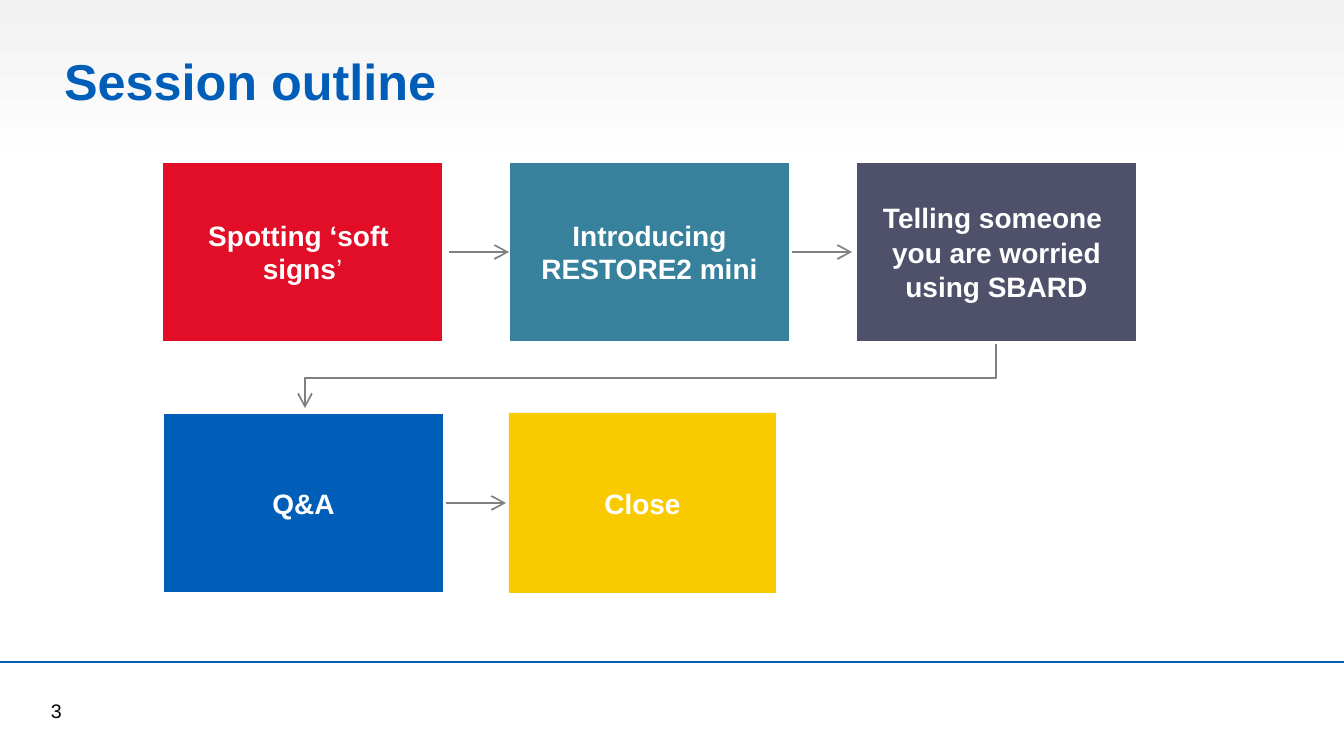
from lxml import etree
from pptx import Presentation
from pptx.dml.color import RGBColor
from pptx.enum import shapes, text
from pptx.oxml import ns
from pptx.util import Pt

PX = 12192000 / 1344
FONT = "Arial"
BLUE = RGBColor(0x00, 0x5E, 0xB8)
RED = RGBColor(0xE2, 0x0D, 0x27)
TEAL = RGBColor(0x37, 0x81, 0x9D)
SLATE = RGBColor(0x4F, 0x50, 0x69)
GOLD = RGBColor(0xFA, 0xCA, 0x01)
GREY = RGBColor(0x80, 0x80, 0x80)
PALE = RGBColor(0xF2, 0xF2, 0xF2)
WHITE = RGBColor(0xFF, 0xFF, 0xFF)
BLACK = RGBColor(0x00, 0x00, 0x00)


def px(*nums):
    return [round(n * PX) for n in nums]


def style(para, size, color, bold=False):
    font = para.font
    font.name, font.size, font.bold = FONT, Pt(size), bold
    font.color.rgb = color


def stroke(shape, color, width, head=False):
    shape.line.color.rgb = color
    shape.line.width = Pt(width)
    props = shape._element.spPr
    if head:
        etree.SubElement(props.find(ns.qn("a:ln")), ns.qn("a:tailEnd"),
                         type="arrow", w="lg", len="lg")
    if props.find(ns.qn("a:effectLst")) is None:
        etree.SubElement(props, ns.qn("a:effectLst"))


def line(slide, start, end, color, width, head=False):
    link = slide.shapes.add_connector(
        shapes.MSO_CONNECTOR.STRAIGHT, *px(*start, *end))
    stroke(link, color, width, head)


def header(slide, x, y, w, h):
    # Shaded band behind the title
    band = slide.shapes.add_shape(shapes.MSO_SHAPE.RECTANGLE, *px(x, y, w, h))
    band.shadow.inherit = False
    band.line.fill.background()
    band.fill.gradient()
    band.fill.gradient_angle = 270
    for stop, color in zip(band.fill.gradient_stops, (PALE, WHITE)):
        stop.color.rgb = color
    slide.shapes._spTree.insert(2, band._element)

    # Title
    title = slide.shapes.title
    title.left, title.top, title.width, title.height = px(
        x + 54, y + 48, 1083, 72)
    frame = title.text_frame
    frame.text = "Session outline"
    frame.auto_size = text.MSO_AUTO_SIZE.NONE
    frame.vertical_anchor = text.MSO_ANCHOR.MIDDLE
    para = frame.paragraphs[0]
    para.alignment = text.PP_ALIGN.LEFT
    para.line_spacing = 0.9
    style(para, 36, BLUE, True)


def card(slide, x, y, w, h, label, color, edge=True):
    box = slide.shapes.add_shape(shapes.MSO_SHAPE.RECTANGLE, *px(x, y, w, h))
    box.shadow.inherit = False
    box.fill.solid()
    box.fill.fore_color.rgb = color
    if edge:
        stroke(box, WHITE, 1)
    else:
        box.line.fill.background()
    frame = box.text_frame
    frame.word_wrap = True
    frame.vertical_anchor = text.MSO_ANCHOR.MIDDLE
    frame.text = label
    for i, para in enumerate(frame.paragraphs):
        para.alignment = text.PP_ALIGN.CENTER
        if i:
            para.space_before = Pt(1)
        style(para, 20, WHITE, True)
    return box


def flow(slide, x, y):
    wide, high, step, drop = 281, 180, 347, 251
    low = y + drop

    # Steps
    spot = card(slide, x, y, wide, high, "Spotting ‘soft \vsigns", RED)
    quote = spot.text_frame.paragraphs[0].add_run()
    quote.text = "’"
    quote.font.bold = False
    card(slide, x + step, y, wide, high, "Introducing RESTORE2 mini", TEAL)
    card(slide, x + 2 * step, y, wide, high,
         "Telling someone \nyou are worried using SBARD", SLATE)
    card(slide, x + 1, low, wide, high, "Q&A", BLUE)
    card(slide, x + step, low, 267, high, "Close", GOLD, False)

    # Arrows along the rows
    for left, mid in ((x + 287, y + 90), (x + 630, y + 90), (x + 284, low + 90)):
        line(slide, (left, mid), (left + 60, mid), GREY, 1.25, True)

    # Arrow from the first row to the second
    right, left, bend = x + 834, x + 143, y + 216
    path = slide.shapes.build_freeform(right, y + 182, scale=PX)
    path.add_line_segments(
        [(right, bend), (left, bend), (left, y + 246)], close=False)
    turn = path.convert_to_shape()
    turn.shadow.inherit = False
    turn.fill.background()
    stroke(turn, GREY, 1.25, True)


def footer(slide, x, y, w):
    line(slide, (x, y), (x + w, y), BLUE, 1)
    box = slide.shapes.add_textbox(*px(x + 41, y + 32, 94, 34))
    frame = box.text_frame
    frame.word_wrap = True
    frame.text = "3"
    style(frame.paragraphs[0], 14, BLACK)


def main():
    deck = Presentation()
    deck.slide_width, deck.slide_height = px(1344, 756)
    slide = deck.slides.add_slide(deck.slide_layouts.get_by_name("Title Only"))
    header(slide, 0, 0, 1344, 177)
    flow(slide, 162, 162)
    footer(slide, 0, 662, 1344)
    deck.save("out.pptx")


if __name__ == "__main__":
    main()
